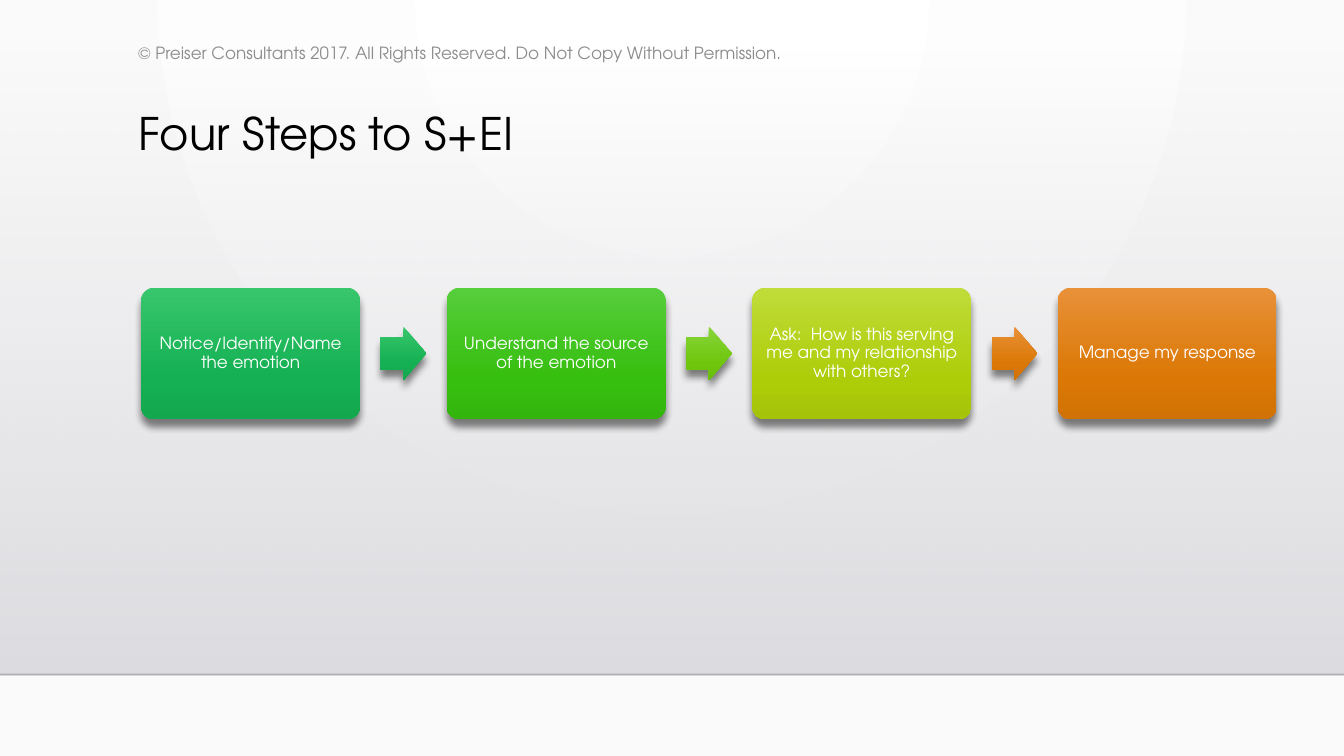
from dataclasses import dataclass

from lxml import etree
from pptx import Presentation
from pptx import util as u
from pptx.dml.color import RGBColor
from pptx.enum import shapes, text
from pptx.oxml import ns

FONT = "TeX Gyre Adventor"
WIDTH = 10
HEIGHT = WIDTH * 9 / 16
COLORS = {
    "black": "000000", "white": "FFFFFF", "notice": "8C8C8C", "rule": "000001",
    "glow": "FAFAFA", "panel_top": "DCDCE0", "panel_bottom": "DEDEE2",
}
SHADES = {
    "emerald": ("39C66C", "14B053", "13A74E"),
    "green": ("57CE3C", "36BF0F", "33B50E"),
    "leaf": ("87D53B", "6FC60C", "69BC0C"),
    "lime": ("C0DC3A", "AECD09", "A5C309"),
    "orange": ("E99139", "DB7805", "D07205"),
}
SHADE_STOPS = (0, 69, 100)

# Process row: equal columns between two margins, all centred on one line
ROW_LEFT, ROW_RIGHT, ROW_MIDDLE = 1.05, 9.5, 2.63
BOX_WIDTH, BOX_HEIGHT = 1.63, 0.98
ARROW_WIDTH, ARROW_HEIGHT = 0.34, 0.4
PANEL_TOP, PANEL_BOTTOM = 0.38, 5.02


@dataclass(frozen=True)
class Step:
    label: str
    shade: str
    arrow_shade: str | None = None


@dataclass(frozen=True)
class Stop:
    position: int
    color: str
    opacity: int = 100


STEPS = (
    Step("Notice/Identify/Name the emotion", "emerald", "emerald"),
    Step("Understand the source of the emotion", "green", "leaf"),
    Step("Ask:  How is this serving me and my relationship with others?", "lime", "orange"),
    Step("Manage my response", "orange"),
)


def add_node(parent, tag: str, **attributes):
    values = {name: str(value) for name, value in attributes.items()}
    return etree.SubElement(parent, ns.qn(tag), values)


def add_color(parent, color: str, opacity: int = 100) -> None:
    node = add_node(parent, "a:srgbClr", val=color)
    if opacity < 100:
        add_node(node, "a:alpha", val=opacity * 1000)


def set_stops(gradient, stops: list[Stop]) -> None:
    stop_list = gradient.find(ns.qn("a:gsLst"))
    for old in list(stop_list):
        stop_list.remove(old)
    for stop in stops:
        node = add_node(stop_list, "a:gs", pos=stop.position * 1000)
        add_color(node, stop.color, stop.opacity)


def add_filled(page, kind, left: float, top: float, width: float, height: float,
               stops: list[Stop]):
    """Add a borderless shape whose gradient runs from top to bottom."""
    shape = page.shapes.add_shape(kind, *map(u.Inches, (left, top, width, height)))
    shape.fill.gradient()
    shape.fill.gradient_angle = 270
    set_stops(shape.element.spPr.find(ns.qn("a:gradFill")), stops)
    shape.line.fill.background()
    shape.shadow.inherit = False
    return shape


def add_process_shape(page, kind, left: float, width: float, height: float,
                      shade: str, adjustments: tuple[float, ...]):
    stops = [Stop(*pair) for pair in zip(SHADE_STOPS, SHADES[shade])]
    shape = add_filled(page, kind, left, ROW_MIDDLE - height / 2, width, height, stops)
    for index, value in enumerate(adjustments):
        shape.adjustments[index] = value
    effects = shape.element.spPr.find(ns.qn("a:effectLst"))
    shadow = add_node(effects, "a:outerShdw", blurRad=u.Pt(4), dist=u.Pt(4),
                      dir=90 * 60000, rotWithShape=0)
    add_color(shadow, COLORS["black"], 48)
    return shape


def write(shape, words: str, size: float, color: str, anchor, align, spacing: float = 1) -> None:
    frame = shape.text_frame
    frame.word_wrap = True
    frame.vertical_anchor = anchor
    para = frame.paragraphs[0]
    para.text = words
    para.alignment = align
    para.line_spacing = spacing
    para.font.name = FONT
    para.font.size = u.Pt(size)
    para.font.color.rgb = RGBColor.from_string(color)


def add_background(page) -> None:
    page.background.fill.gradient()
    gradient = page.element.find(".//" + ns.qn("a:gradFill"))
    set_stops(gradient, [Stop(0, COLORS["white"]), Stop(100, COLORS["glow"])])
    gradient.remove(gradient.find(ns.qn("a:lin")))
    circle = add_node(gradient, "a:path", path="circle")
    add_node(circle, "a:fillToRect", l=43000, t=0, r=43000, b=100000)

    add_filled(page, shapes.MSO_SHAPE.RECTANGLE, 0, PANEL_TOP, WIDTH, PANEL_BOTTOM - PANEL_TOP,
               [Stop(0, COLORS["panel_top"], 0), Stop(100, COLORS["panel_bottom"])])
    rule = page.shapes.add_connector(
        shapes.MSO_CONNECTOR.STRAIGHT,
        *map(u.Inches, (0, PANEL_BOTTOM, WIDTH, PANEL_BOTTOM)))
    rule.line.width = u.Pt(1)
    rule.line.color.rgb = RGBColor.from_string(COLORS["rule"])
    add_node(rule.element.spPr.find(".//" + ns.qn("a:srgbClr")), "a:alpha", val=20000)
    add_node(rule.element.spPr, "a:effectLst")


def add_steps(page) -> None:
    pitch = (ROW_RIGHT - ROW_LEFT - BOX_WIDTH) / (len(STEPS) - 1)
    gap = (pitch - BOX_WIDTH - ARROW_WIDTH) / 2
    for column, step in enumerate(STEPS):
        left = ROW_LEFT + column * pitch
        box = add_process_shape(page, shapes.MSO_SHAPE.ROUNDED_RECTANGLE, left,
                                BOX_WIDTH, BOX_HEIGHT, step.shade, (0.1,))
        frame = box.text_frame
        frame.margin_left = frame.margin_right = u.Inches(0.04)
        frame.margin_top = frame.margin_bottom = u.Inches(0.04)
        write(box, step.label, 9, COLORS["white"], text.MSO_ANCHOR.MIDDLE,
              text.PP_ALIGN.CENTER, 0.9)
        if step.arrow_shade:
            add_process_shape(page, shapes.MSO_SHAPE.RIGHT_ARROW, left + BOX_WIDTH + gap,
                              ARROW_WIDTH, ARROW_HEIGHT, step.arrow_shade, (0.6, 0.5))


def main() -> None:
    deck = Presentation()
    deck.slide_width, deck.slide_height = u.Inches(WIDTH), u.Inches(HEIGHT)
    page = deck.slides.add_slide(deck.slide_layouts[6])
    add_background(page)

    title = page.shapes.add_textbox(*map(u.Inches, (0.93, 0.78, 7.88, 0.86)))
    write(title, "Four Steps to S+EI", 24, COLORS["black"], text.MSO_ANCHOR.TOP,
          text.PP_ALIGN.LEFT, 0.9)
    add_steps(page)
    notice = page.shapes.add_textbox(*map(u.Inches, (0.93, 0.26, 5.11, 0.26)))
    write(notice,
          "© Preiser Consultants 2017. All Rights Reserved. Do Not Copy Without Permission.",
          9, COLORS["notice"], text.MSO_ANCHOR.MIDDLE, text.PP_ALIGN.LEFT)
    deck.save("out.pptx")


if __name__ == "__main__":
    main()
